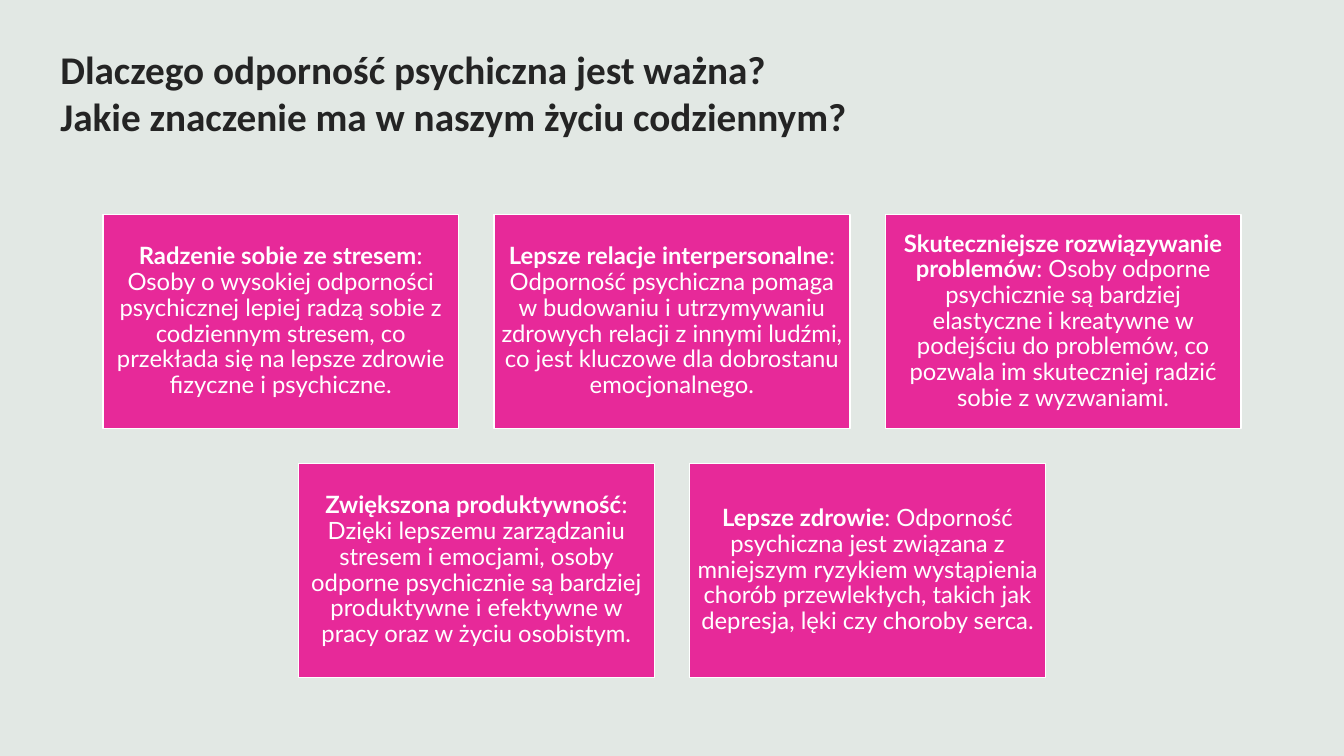
from pptx import Presentation
from pptx.dml.color import RGBColor
from pptx.enum.shapes import MSO_SHAPE as Shape
from pptx.enum.text import MSO_ANCHOR as Anchor, PP_ALIGN as Align
from pptx.util import Inches, Pt

WIDE, HIGH = 13.33, 7.5
CARD_W, CARD_H, GAP = 3.53, 2.12, 0.35

TITLE = ["Dlaczego odporność psychiczna jest ważna?",
         "Jakie znaczenie\u00a0ma w naszym życiu codziennym?"]
ROWS = [
    [("Radzenie sobie ze stresem",
      ": Osoby o wysokiej odporności psychicznej lepiej radzą sobie z codziennym "
      "stresem, co przekłada się na lepsze zdrowie fizyczne i psychiczne."),
     ("Lepsze relacje interpersonalne",
      ": Odporność psychiczna pomaga w budowaniu i utrzymywaniu zdrowych relacji "
      "z innymi ludźmi, co jest kluczowe dla dobrostanu emocjonalnego."),
     ("Skuteczniejsze rozwiązywanie problemów",
      ": Osoby odporne psychicznie są bardziej elastyczne i kreatywne w podejściu "
      "do problemów, co pozwala im skuteczniej radzić sobie z wyzwaniami.")],
    [("Zwiększona produktywność",
      ": Dzięki lepszemu zarządzaniu stresem i emocjami, osoby odporne psychicznie "
      "są bardziej produktywne i efektywne w pracy oraz w życiu osobistym."),
     ("Lepsze zdrowie",
      ": Odporność psychiczna jest związana z mniejszym ryzykiem wystąpienia chorób "
      "przewlekłych, takich jak depresja, lęki czy choroby serca.")],
]


def color(code):
    return RGBColor.from_string(code)


def add_run(para, text, font, size, code, bold):
    run = para.add_run()
    run.text = text
    run.font.name, run.font.size, run.font.bold = font, Pt(size), bold
    run.font.color.rgb = color(code)


def add_title(slide, x, y, w, h):
    frame = slide.shapes.add_textbox(*map(Inches, (x, y, w, h))).text_frame
    frame.word_wrap = True
    frame.vertical_anchor = Anchor.MIDDLE
    frame.margin_bottom = Inches(0.46)
    para = frame.paragraphs[0]
    for i, line in enumerate(TITLE):
        if i:
            para.add_line_break()
        add_run(para, line, "Calibri", 28, "242424", True)


def add_card(slide, x, y, head, body):
    card = slide.shapes.add_shape(
        Shape.RECTANGLE, *map(Inches, (x, y, CARD_W, CARD_H)))
    card.shadow.inherit = False
    card.fill.solid()
    card.fill.fore_color.rgb = color("E72999")
    card.line.color.rgb = color("FFFFFF")
    card.line.width = Pt(1)
    frame = card.text_frame
    frame.word_wrap = True
    frame.vertical_anchor = Anchor.MIDDLE
    frame.margin_left = frame.margin_right = Inches(0.07)
    frame.margin_top = frame.margin_bottom = Inches(0.07)
    para = frame.paragraphs[0]
    para.alignment = Align.CENTER
    para.line_spacing = 0.9
    add_run(para, head, "Lato", 17, "FFFFFF", True)
    add_run(para, body, "Lato", 17, "FFFFFF", False)


def add_cards(slide, x, y, w):
    """Stack the rows of cards, each row centred in the width."""
    for i, row in enumerate(ROWS):
        used = len(row) * (CARD_W + GAP) - GAP
        left = x + (w - used) / 2
        for j, (head, body) in enumerate(row):
            add_card(slide, left + j * (CARD_W + GAP),
                     y + i * (CARD_H + GAP), head, body)


def main():
    deck = Presentation()
    deck.slide_width, deck.slide_height = Inches(WIDE), Inches(HIGH)
    slide = deck.slides.add_slide(deck.slide_layouts[6])
    slide.background.fill.solid()
    slide.background.fill.fore_color.rgb = color("E2E8E4")
    add_title(slide, 0.5, 0.4, 11.92, 1.45)
    add_cards(slide, 1.02, 2.13, 11.29)
    deck.save("out.pptx")


if __name__ == "__main__":
    main()
